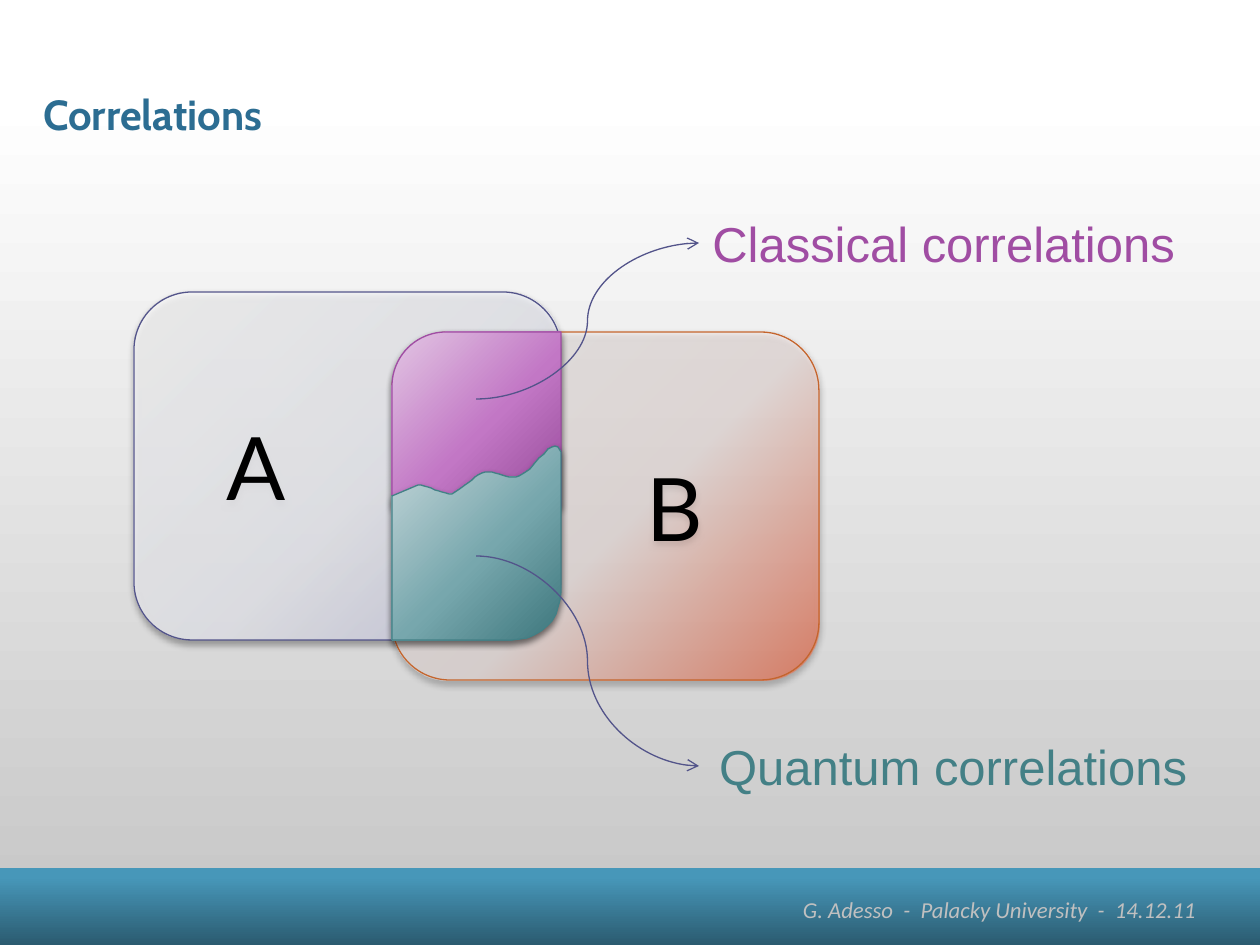
from dataclasses import dataclass

from lxml import etree
from pptx import Presentation
from pptx.dml.color import RGBColor as Rgb
from pptx.enum.shapes import MSO_CONNECTOR as Link, MSO_SHAPE as Kind
from pptx.enum.text import MSO_ANCHOR as Anchor, PP_ALIGN as Align
from pptx.oxml import parse_xml
from pptx.oxml.ns import nsdecls, qn
from pptx.util import Pt

PX = 914400 / 126


def emu(px):
    return round(px * PX)


@dataclass(frozen=True)
class Theme:
    # Colours
    blue: str = "2C6D92"
    ink: str = "000000"
    grey: str = "C0C0C0"
    navy: str = "53548A"
    rust: str = "C4652D"
    plum: str = "A04DA3"
    teal: str = "438086"
    # Gradient stops: percent, colour
    sky: tuple = ((0, "FFFFFF"), (100, "C9C9C9"))
    bar: tuple = ((0, "4797B9"), (12, "4797B9"), (100, "2B5B70"))
    cool: tuple = ((0, "FEFEFE"), (55, "F0F1F7"), (100, "C2C2DD"))
    warm: tuple = ((0, "FFFEFD"), (55, "FFEFEC"), (100, "FF4B1C"))
    pink: tuple = ((0, "E2C6E3"), (55, "C277C5"), (100, "954898"))
    sea: tuple = ((0, "C7D7DA"), (55, "77A7AD"), (100, "3E777D"))
    # Type sizes and fonts
    head: int = 24
    foot: int = 13
    mark: int = 50
    note: int = 28
    serif: str = "Calibri"
    title: str = "Cabin"
    sans: str = "Arial"
    big: str = "Lato"


def write(frame, text, font, size, color, bold=False, italic=False,
          align=Align.LEFT, anchor=Anchor.TOP, wrap=True, left=13, right=13,
          space=None):
    frame.word_wrap = wrap
    frame.vertical_anchor = anchor
    frame.margin_left, frame.margin_right = emu(left), emu(right)
    frame.margin_top = frame.margin_bottom = emu(6)
    par = frame.paragraphs[0]
    par.alignment = align
    if space:
        par.line_spacing = space
    run = par.add_run()
    run.text = text
    face = run.font
    face.name, face.size = font, Pt(size)
    face.bold, face.italic = bold, italic
    face.color.rgb = Rgb.from_string(color)


def bend(a, b, c, d, steps=10):
    """Points along a cubic curve, without its start."""
    for i in range(1, steps + 1):
        t = i / steps
        u = 1 - t
        yield tuple(u**3 * p + 3 * u * u * t * q + 3 * u * t * t * r + t**3 * s
                    for p, q, r, s in zip(a, b, c, d))


class Deck:
    def __init__(self, theme):
        self.theme = theme
        self.prs = Presentation()
        self.prs.slide_width, self.prs.slide_height = emu(1260), emu(945)
        self.slide = self.prs.slides.add_slide(self.prs.slide_layouts[5])
        self.shapes = self.slide.shapes

    def paint(self, shape, stops, line=None, alpha=100, glow=None):
        """Gradient, outline and soft shadow; outlined shapes fade radially."""
        marks = "".join(
            f'<a:gs pos="{pos * 1000}"><a:srgbClr val="{color}">'
            f'<a:alpha val="{alpha * 1000}"/></a:srgbClr></a:gs>'
            for pos, color in stops)
        way = ('<a:path path="circle"><a:fillToRect l="-40000" t="-90000" '
               'r="140000" b="190000"/></a:path>' if line
               else '<a:lin ang="5400000" scaled="0"/>')
        shape.fill.background()
        props = shape._element.spPr
        old = props.find(qn("a:noFill"))
        props.replace(old, parse_xml(
            f'<a:gradFill {nsdecls("a")} rotWithShape="1">'
            f'<a:gsLst>{marks}</a:gsLst>{way}</a:gradFill>'))
        if line:
            shape.line.color.rgb = Rgb.from_string(line)
            shape.line.width = Pt(0.75)
        else:
            shape.line.fill.background()
        shape.shadow.inherit = False
        if glow:
            props.find(qn("a:effectLst")).append(parse_xml(
                f'<a:outerShdw {nsdecls("a")} blurRad="{Pt(4)}" '
                f'dist="{Pt(2)}" dir="5400000" rotWithShape="0">'
                f'<a:srgbClr val="000000"><a:alpha val="{glow * 1000}"/>'
                '</a:srgbClr></a:outerShdw>'))
        return shape

    def block(self, kind, box, stops, **look):
        shape = self.shapes.add_shape(kind, *map(emu, box))
        return self.paint(shape, stops, **look)

    def free(self, points, stops, **look):
        pen = self.shapes.build_freeform(*points[0], scale=PX)
        pen.add_line_segments(points[1:], close=True)
        return self.paint(pen.convert_to_shape(), stops, **look)

    def head(self, text, box):
        title = self.shapes.title
        title.left, title.top, title.width, title.height = map(emu, box)
        self.shapes._spTree.append(title._element)  # above the backdrop
        t = self.theme
        write(title.text_frame, text, t.title, t.head, t.blue, bold=True,
              left=0, right=0, space=0.95)

    def text(self, text, box, **look):
        frame = self.shapes.add_textbox(*map(emu, box)).text_frame
        write(frame, text, **look)

    def arrow(self, start, end, color):
        link = self.shapes.add_connector(Link.CURVE, *map(emu, start + end))
        link.line.color.rgb = Rgb.from_string(color)
        link.line.width = Pt(0.75)
        etree.SubElement(link.line._get_or_add_ln(), qn("a:tailEnd"),
                         type="arrow")
        etree.SubElement(link._element.spPr, qn("a:effectLst"))


def main():
    t = Theme()
    deck = Deck(t)

    # Backdrop, title and footer
    deck.block(Kind.RECTANGLE, (0, 97, 1260, 787), t.sky)
    deck.block(Kind.RECTANGLE, (0, 868, 1260, 77), t.bar)
    deck.head("Correlations", (43, 86, 1173, 83))
    deck.text("G. Adesso  -  Palacky University  -  14.12.11",
              (790, 890, 470, 24), font=t.serif, size=t.foot, color=t.grey,
              italic=True)

    # Systems A and B
    for name, x, y, stops, line, alpha, left, align in (
            ("A", 134, 292, t.cool, t.navy, 75, 76, Align.LEFT),
            ("B", 392, 332, t.warm, t.rust, 50, 151, Align.CENTER)):
        shape = deck.block(Kind.ROUNDED_RECTANGLE, (x, y, 427, 348), stops,
                           line=line, alpha=alpha, glow=40)
        write(shape.text_frame, name, t.big, t.mark, t.ink, align=align,
              anchor=Anchor.MIDDLE, left=left)

    # Overlap: classical part above
    top = deck.block(Kind.ROUND_1_RECTANGLE, (392, 332, 169, 174), t.pink,
                     line=t.plum, glow=45)
    top.adjustments[0] = 0.32
    top._element.spPr.xfrm.set("flipH", "1")

    # Overlap: quantum part below, with a wavy upper edge
    edge = [(392, 640), (512, 640)]
    edge += bend(edge[-1], (539, 640), (561, 619), (561, 592))
    edge.append((561, 452))
    for curve in (((553, 431), (537, 469), (519, 476)),
                  ((508, 481), (496, 470), (485, 472)),
                  ((474, 475), (462, 490), (452, 494)),
                  ((442, 494), (428, 485), (418, 485))):
        edge += bend(edge[-1], *curve)
    edge.append((392, 496))
    deck.free(edge, t.sea, line=t.teal, glow=45)

    # Labels with their arrows
    for word, color, start, y, width in (
            ("Classical", t.plum, 399, 243, 489),
            ("Quantum", t.teal, 556, 766, 508)):
        deck.arrow((476, start), (699, y), t.navy)
        deck.text(f"{word} correlations", (699, y - 36, width, 72),
                  font=t.sans, size=t.note, color=color, align=Align.CENTER,
                  wrap=False)

    deck.prs.save("out.pptx")


if __name__ == "__main__":
    main()
